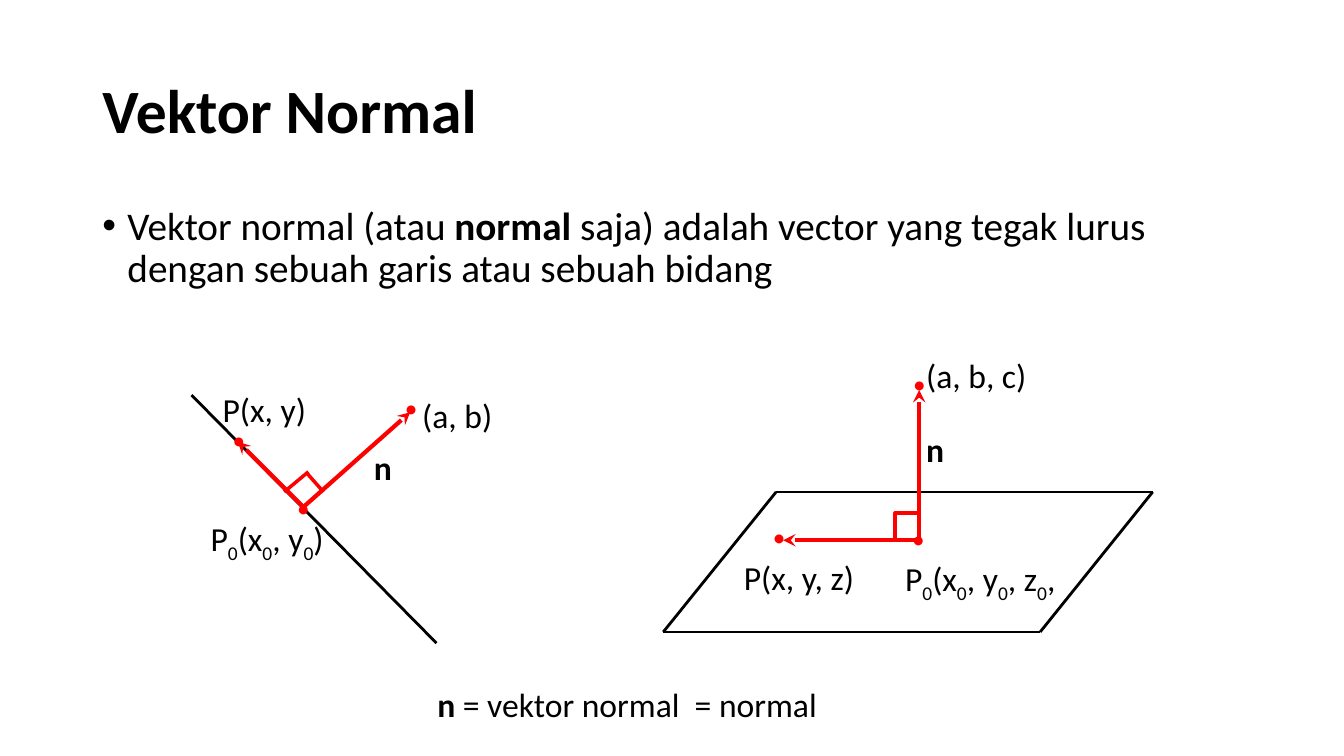
from lxml import etree
from pptx import Presentation
from pptx.dml.color import RGBColor
from pptx.enum.shapes import MSO_CONNECTOR, MSO_SHAPE
from pptx.enum.text import MSO_ANCHOR, MSO_AUTO_SIZE, PP_ALIGN
from pptx.oxml.ns import qn
from pptx.util import Pt

STRAIGHT, RECT = MSO_CONNECTOR.STRAIGHT, MSO_SHAPE.RECTANGLE
MIDDLE, TOP, LEFT = MSO_ANCHOR.MIDDLE, MSO_ANCHOR.TOP, PP_ALIGN.LEFT
GROW, FIXED = MSO_AUTO_SIZE.SHAPE_TO_FIT_TEXT, MSO_AUTO_SIZE.NONE

COLORS = {"ink": "000000", "red": "FF0000"}
FONT = "Calibri"

# Runs are (text, style); style is "", "bold" or "sub".
TITLE = [("Vektor Normal", "bold")]
BODY = [
    ("Vektor normal (atau ", ""),
    ("normal ", "bold"),
    ("saja) adalah vector yang tegak lurus dengan sebuah garis "
     "atau sebuah bidang", ""),
]
ZERO = ("0", "sub")
BASE_2D = [("P", ""), ZERO, ("(x", ""), ZERO, (", y", ""), ZERO, (")", "")]
BASE_3D = BASE_2D[:-1] + [(", z", ""), ZERO, (",", "")]
NORMAL = [("n", "bold")]
LEGEND = [("n ", "bold"), ("= vektor normal  = normal", "")]

# Labels: runs, left, top, width, wrap
LABELS = [
    ([("(a, b)", "")], 294.5, 278.6, 64.8, False),
    (BASE_2D, 143.3, 366.5, 99.4, False),
    ([("P(x, y)", "")], 151.9, 274.3, 74.9, False),
    (NORMAL, 259.9, 315.4, 36, True),
    ([("(a, b, c)", "")], 654.5, 249.8, 86.4, False),
    (BASE_3D, 639.4, 395.3, 125.3, False),
    ([("P(x, y, z)", "")], 524.2, 394.6, 94.3, False),
    (NORMAL, 654.5, 303.1, 36, True),
    (LEGEND, 305.3, 485.3, 288, False),
]

# Lines: start x, start y, end x, end y
GARIS = (136.8, 282.2, 311.8, 459.4)
PLANE = [(554.4, 351.4), (823.4, 351.4), (743, 451.4), (473.8, 451.4)]
VECTORS = [
    (216.7, 362.2, 293, 294.5),
    (216.7, 362.2, 169.9, 315.4),
    (656.6, 386.6, 656.6, 278.6),
    (657.4, 385.9, 559.4, 385.9),
]
CORNER = [(203, 351.4, 220.3, 337), (219.6, 338.4, 231.1, 351.4)]
SQUARE = (639.4, 366.5, 17.3, 19.4)

DOT = (23, 28.8)
DOTS = [(282.2, 276.5), (159.1, 299.5), (205.2, 347.8),
        (645.1, 259.9), (644.4, 370.1), (545, 368.6)]


def points(*values):
    return [Pt(v) for v in values]


def paint(color):
    return RGBColor.from_string(COLORS[color])


def assign(target, **values):
    for name, value in values.items():
        setattr(target, name, value)


def write(shape, runs, size, color="ink", para=None, **frame):
    """Fill a shape's first paragraph with styled runs."""
    assign(shape.text_frame, **frame)
    first = shape.text_frame.paragraphs[0]
    assign(first, alignment=LEFT, **(para or {}))
    for text, style in runs:
        run = first.add_run()
        run.text = text
        assign(run.font, name=FONT, size=Pt(size), bold=style == "bold")
        run.font.color.rgb = paint(color)
        if style == "sub":
            run._r.get_or_add_rPr().set("baseline", "-25000")
    return first


def label(shapes, runs, left, top, width, wrap, height=36, **text):
    box = shapes.add_textbox(*points(left, top, width, height))
    write(box, runs, word_wrap=wrap, auto_size=GROW, **text)


def draw(shapes, ends, color, width, arrow=False):
    line = shapes.add_connector(STRAIGHT, *points(*ends))
    line.line.color.rgb = paint(color)
    line.line.width = Pt(width)
    if arrow:
        etree.SubElement(line.line._get_or_add_ln(), qn("a:tailEnd"),
                         type="stealth")
    etree.SubElement(line._element.spPr, qn("a:effectLst"))


def bullet(para):
    props = para._p.get_or_add_pPr()
    props.set("marL", str(Pt(18)))
    props.set("indent", str(-Pt(18)))
    etree.SubElement(props, qn("a:buFont"), typeface="Arial")
    etree.SubElement(props, qn("a:buChar"), char="•")


def main():
    deck = Presentation()
    assign(deck, slide_width=Pt(960), slide_height=Pt(540))
    slide = deck.slides.add_slide(deck.slide_layouts[5])
    shapes = slide.shapes

    title = shapes.title
    assign(title, left=Pt(66), top=Pt(28.8), width=Pt(828), height=Pt(104.4))
    write(title, TITLE, 44, para={"line_spacing": 0.9},
          vertical_anchor=MIDDLE, word_wrap=True, auto_size=FIXED)

    body = shapes.add_textbox(*points(66, 144, 828, 342.7))
    spacing = {"line_spacing": 0.9, "space_before": Pt(10)}
    bullet(write(body, BODY, 28, para=spacing, vertical_anchor=TOP,
                 word_wrap=True, auto_size=FIXED))

    draw(shapes, GARIS, "ink", 2)
    for start, end in zip(PLANE, PLANE[1:] + PLANE[:1]):
        draw(shapes, start + end, "ink", 2)
    for ends in VECTORS:
        draw(shapes, ends, "red", 3, arrow=True)
    for ends in CORNER:
        draw(shapes, ends, "red", 2.5)

    square = shapes.add_shape(RECT, *points(*SQUARE))
    square.shadow.inherit = False
    square.fill.background()
    square.line.color.rgb = paint("red")
    square.line.width = Pt(2.5)

    for left, top in DOTS:
        label(shapes, [("•", "")], left, top, DOT[0], False, DOT[1],
              size=18, color="red")
    for item in LABELS:
        label(shapes, *item, size=24)

    deck.save("out.pptx")


if __name__ == "__main__":
    main()
